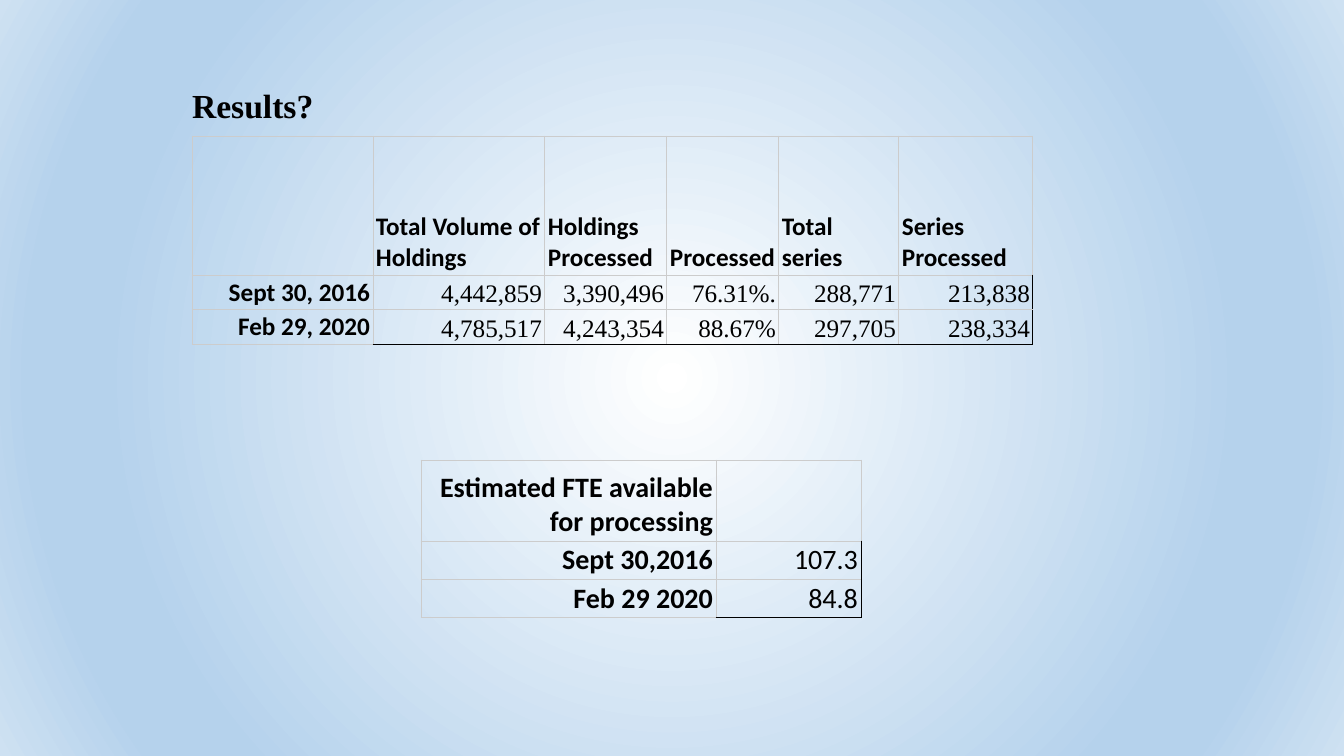
from dataclasses import dataclass

from pptx import Presentation
from pptx.dml.color import RGBColor
from pptx.enum.text import MSO_ANCHOR as Anchor, PP_ALIGN as Align
from pptx.oxml import parse_xml
from pptx.oxml.ns import nsdecls
from pptx.util import Emu, Pt

EMU_PER_PIXEL = 914400 / 100.8


def px(pixels):
    return Emu(round(pixels * EMU_PER_PIXEL))


@dataclass(frozen=True)
class Theme:
    ink: str = "000000"
    grid: str = "CCCCCC"
    glow: tuple = ((0, "FFFFFF"), (74, "B5D2EC"), (83, "B5D2EC"), (100, "CEE1F2"))
    sans: str = "Calibri"
    serif: str = "Times New Roman"
    title_size: int = 24
    holdings_size: int = 18
    staff_size: int = 20
    border: float = 0.75


class SlideBuilder:
    def __init__(self, deck, theme):
        self.theme = theme
        self.page = deck.slides.add_slide(deck.slide_layouts[5])

    def background(self):
        stops = "".join(
            f'<a:gs pos="{position * 1000}"><a:srgbClr val="{color}"/></a:gs>'
            for position, color in self.theme.glow)
        self.page.element.cSld.insert(0, parse_xml(
            f'<p:bg {nsdecls("p", "a")}><p:bgPr><a:gradFill rotWithShape="1">'
            f'<a:gsLst>{stops}</a:gsLst><a:path path="circle">'
            '<a:fillToRect l="50000" t="50000" r="50000" b="50000"/></a:path>'
            '</a:gradFill><a:effectLst/></p:bgPr></p:bg>'))

    def add_text(self, para, text, size, font, bold, align):
        para.alignment = align
        span = para.add_run()
        span.text = text
        span.font.size = Pt(size)
        span.font.name = font
        span.font.bold = bold
        span.font.color.rgb = RGBColor.from_string(self.theme.ink)

    def title(self, text, left, top, width, height):
        box = self.page.shapes.title
        box.left, box.top, box.width, box.height = map(px, (left, top, width, height))
        frame = box.text_frame
        frame.word_wrap = True
        frame.vertical_anchor = Anchor.TOP
        self.add_text(frame.paragraphs[0], text, self.theme.title_size,
                      self.theme.serif, True, Align.LEFT)

    def borders(self, cell, dark_sides):
        properties = cell._tc.get_or_add_tcPr()
        for index, side in enumerate("LRTB"):
            color = self.theme.ink if side in dark_sides else self.theme.grid
            properties.insert(index, parse_xml(
                f'<a:ln{side} {nsdecls("a")} w="{Pt(self.theme.border)}"><a:solidFill>'
                f'<a:srgbClr val="{color}"/></a:solidFill></a:ln{side}>'))

    def table(self, left, top, columns, heights, rows, size, value_font, header_align):
        table = self.page.shapes.add_table(
            len(rows), len(columns), px(left), px(top),
            px(sum(columns)), px(sum(heights))).table
        table.first_row = table.horz_banding = False
        for column, width in zip(table.columns, columns):
            column.width = px(width)
        for row, height in zip(table.rows, heights):
            row.height = px(height)
        for r, texts in enumerate(rows):
            for c, text in enumerate(texts):
                cell = table.cell(r, c)
                cell.vertical_anchor = Anchor.BOTTOM
                cell.margin_left = cell.margin_right = px(3)
                cell.margin_top = cell.margin_bottom = px(2)
                cell.fill.background()
                # Value cells close the table with dark outer edges
                is_value = r > 0 and c > 0
                dark = "R" if is_value and c == len(columns) - 1 else ""
                dark += "B" if is_value and r == len(rows) - 1 else ""
                self.borders(cell, dark)
                if text:
                    self.add_text(cell.text_frame.paragraphs[0], text, size,
                                  value_font if is_value else self.theme.sans,
                                  not is_value, Align.RIGHT if r else header_align)


theme = Theme()
deck = Presentation()
deck.slide_width, deck.slide_height = px(1344), px(756)
results = SlideBuilder(deck, theme)
results.background()
results.title("Results?", 182, 80, 970, 112)

# Holdings and series processed
results.table(
    192, 136, (181, 172, 122, 112, 120, 134), (139, 34, 34),
    (("", "Total Volume of Holdings", "Holdings Processed", "Processed",
      "Total series", "Series Processed"),
     ("Sept 30, 2016", "4,442,859", "3,390,496", "76.31%.", "288,771", "213,838"),
     ("Feb 29, 2020", "4,785,517", "4,243,354", "88.67%", "297,705", "238,334")),
    theme.holdings_size, theme.serif, Align.LEFT)

# Staff available
results.table(
    421, 460, (295, 145), (81, 38, 38),
    (("Estimated FTE available for processing", ""),
     ("Sept 30,2016", "107.3"),
     ("Feb 29 2020", "84.8")),
    theme.staff_size, theme.sans, Align.RIGHT)

deck.save("out.pptx")
